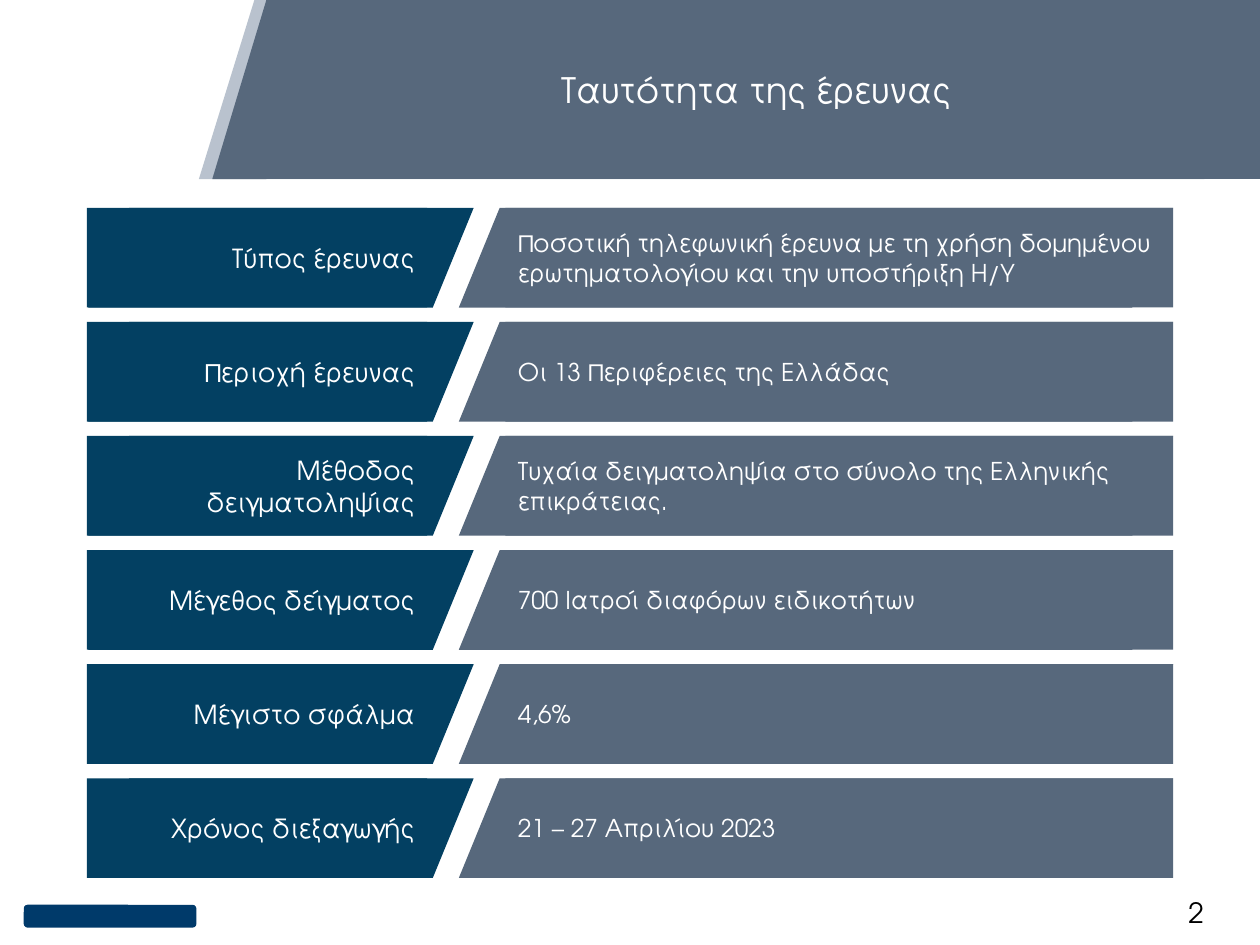
from dataclasses import dataclass

from pptx import Presentation
from pptx.dml.color import RGBColor
from pptx.enum.shapes import MSO_SHAPE
from pptx.enum.text import MSO_ANCHOR, PP_ALIGN
from pptx.shapes.autoshape import Shape
from pptx.slide import Slide
from pptx.util import Cm, Pt

COLORS = {
    "navy": "034062",
    "slate": "57687C",
    "mist": "B9C2CE",
    "emblem": "003A6A",
    "white": "FFFFFF",
    "black": "000000",
}
FONT = "TeX Gyre Adventor"

ROW_TOP, ROW_PITCH, ROW_HEIGHT = 4.19, 2.3, 2.01
HEADER_HEIGHT = 3.61


@dataclass(frozen=True)
class Area:
    """Position and size in centimetres."""
    left: float
    top: float
    width: float
    height: float


@dataclass(frozen=True)
class SurveyFact:
    label: str
    detail: str


FACTS = [
    SurveyFact("Τύπος έρευνας",
               "Ποσοτική τηλεφωνική έρευνα με τη χρήση δομημένου "
               "ερωτηματολογίου και την υποστήριξη Η/Υ"),
    SurveyFact("Περιοχή έρευνας", "Οι 13 Περιφέρειες της Ελλάδας"),
    SurveyFact("Μέθοδος δειγματοληψίας",
               "Τυχαία δειγματοληψία στο σύνολο της Ελληνικής επικράτειας."),
    SurveyFact("Μέγεθος δείγματος", "700 Ιατροί διαφόρων ειδικοτήτων"),
    SurveyFact("Μέγιστο σφάλμα", "4,6%"),
    SurveyFact("Χρόνος διεξαγωγής", "21 – 27 Απριλίου 2023"),
]


def add_block(page: Slide, kind: MSO_SHAPE, area: Area, color: str,
              slant: float | None = None) -> Shape:
    """Add a flat filled shape; slant is the parallelogram adjustment."""
    block = page.shapes.add_shape(kind, Cm(area.left), Cm(area.top),
                                  Cm(area.width), Cm(area.height))
    block.shadow.inherit = False
    block.fill.solid()
    block.fill.fore_color.rgb = RGBColor.from_string(COLORS[color])
    block.line.fill.background()
    if slant is not None:
        block.adjustments[0] = slant
    return block


def write(box: Shape, text: str, size: float, align: PP_ALIGN,
          color: str = "white") -> None:
    frame = box.text_frame
    frame.word_wrap = True
    frame.vertical_anchor = MSO_ANCHOR.MIDDLE
    paragraph = frame.paragraphs[0]
    paragraph.text = text
    paragraph.alignment = align
    paragraph.font.name = FONT
    paragraph.font.size = Pt(size)
    paragraph.font.color.rgb = RGBColor.from_string(COLORS[color])


def add_header(page: Slide) -> None:
    add_block(page, MSO_SHAPE.PARALLELOGRAM,
              Area(4.01, 0, 21.39, HEADER_HEIGHT), "mist", 0.31)
    title = add_block(page, MSO_SHAPE.PARALLELOGRAM,
                      Area(5.36, 0, 20.04, HEADER_HEIGHT), "slate", 0)
    title.text_frame.margin_right = Cm(0.51)
    write(title, "Ταυτότητα της έρευνας", 20, PP_ALIGN.CENTER)
    edge = add_block(page, MSO_SHAPE.RIGHT_TRIANGLE,
                     Area(3.02, 1.26, HEADER_HEIGHT, 1.09), "slate")
    edge.rotation = 270


def add_fact(page: Slide, fact: SurveyFact, top: float) -> None:
    """Draw slanted label and detail bands with text boxes over them."""
    add_block(page, MSO_SHAPE.PARALLELOGRAM,
              Area(1.78, top, 7.77, ROW_HEIGHT), "navy", 0.41)
    add_block(page, MSO_SHAPE.PARALLELOGRAM,
              Area(9.25, top, 14.4, ROW_HEIGHT), "slate", 0.41)
    label = add_block(page, MSO_SHAPE.RECTANGLE,
                      Area(1.75, top, 6.86, ROW_HEIGHT), "navy")
    write(label, fact.label, 15, PP_ALIGN.RIGHT)
    detail = add_block(page, MSO_SHAPE.RECTANGLE,
                       Area(10.19, top, 13.46, ROW_HEIGHT), "slate")
    write(detail, fact.detail, 14, PP_ALIGN.LEFT)


def main() -> None:
    deck = Presentation()
    deck.slide_width, deck.slide_height = Cm(25.4), Cm(19.05)
    page = deck.slides.add_slide(deck.slide_layouts[6])

    add_block(page, MSO_SHAPE.ROUNDED_RECTANGLE,
              Area(0.48, 18.24, 3.48, 0.46), "emblem")
    add_header(page)
    number = page.shapes.add_textbox(Cm(22.83), Cm(17.73), Cm(2.57), Cm(1.32))
    write(number, "2", 16, PP_ALIGN.CENTER, "black")
    for index, fact in enumerate(FACTS):
        add_fact(page, fact, ROW_TOP + index * ROW_PITCH)

    deck.save("out.pptx")


if __name__ == "__main__":
    main()
